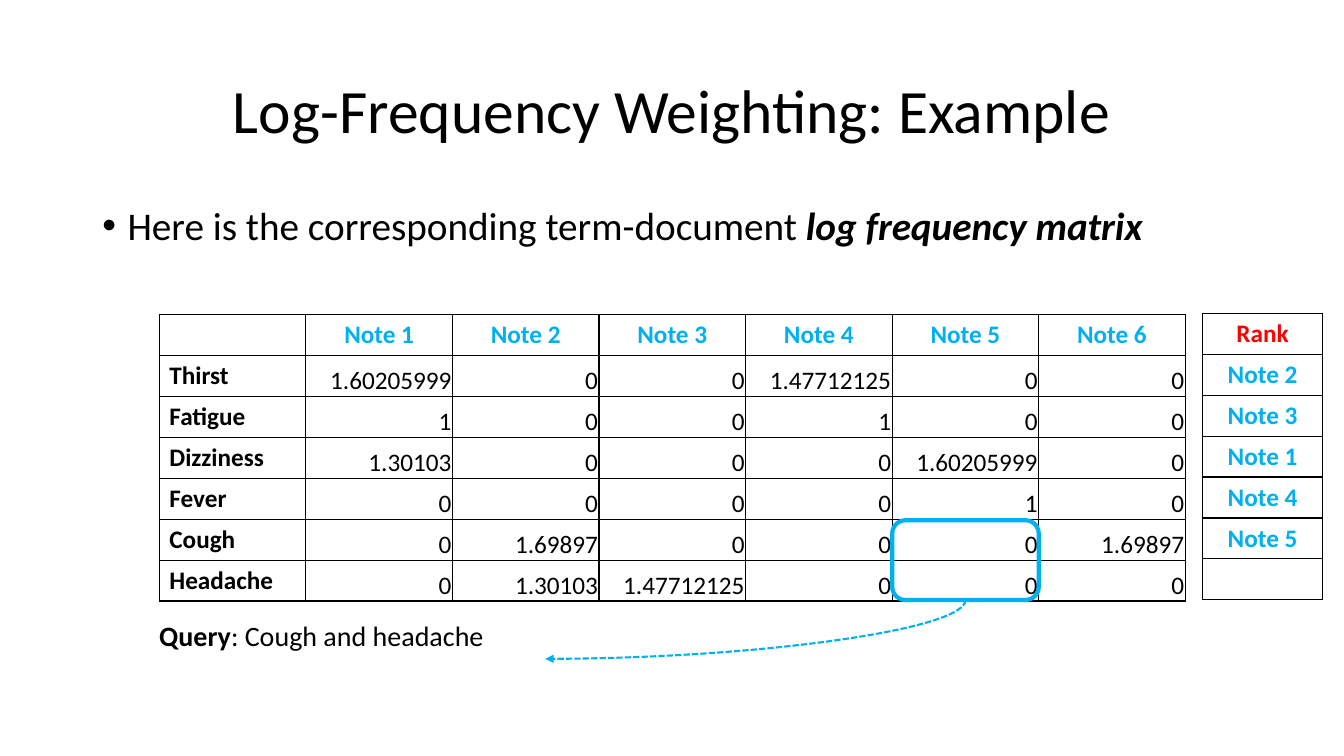
from dataclasses import dataclass

import pptx
import pptx.util
import pptx.dml.color
import pptx.enum.dml
import pptx.enum.shapes
import pptx.enum.text
import pptx.oxml
import pptx.oxml.ns

Pt = pptx.util.Pt
RGB = pptx.dml.color.RGBColor.from_string
qn = pptx.oxml.ns.qn
ALIGN = pptx.enum.text.PP_ALIGN
ANCHOR = pptx.enum.text.MSO_ANCHOR


@dataclass(frozen=True)
class Theme:
    font: str = "Calibri"
    text: str = "000000"
    accent: str = "00B0F0"
    rank: str = "FF0000"
    title: int = 44
    body: int = 28
    query: int = 20
    cell: int = 18


THEME = Theme()
ROW_H = 29.2
NOTES = [f"Note {n}" for n in range(1, 7)]
WEIGHTS = {
    "Thirst": ["1.60205999", "0", "0", "1.47712125", "0", "0"],
    "Fatigue": ["1", "0", "0", "1", "0", "0"],
    "Dizziness": ["1.30103", "0", "0", "0", "1.60205999", "0"],
    "Fever": ["0", "0", "0", "0", "1", "0"],
    "Cough": ["0", "1.69897", "0", "0", "0", "1.69897"],
    "Headache": ["0", "1.30103", "1.47712125", "0", "0", "0"],
}
RANKING = ["Note 2", "Note 3", "Note 1", "Note 4", "Note 5", ""]


def element(tag, **attrs):
    el = pptx.oxml.parse_xml(f"<{tag} {pptx.oxml.ns.nsdecls('a')}/>")
    for name, value in attrs.items():
        el.set(name, value)
    return el


def add_run(p, text, size, color=THEME.text, bold=False, italic=False):
    r = p.add_run()
    r.text = text
    r.font.name, r.font.size = THEME.font, Pt(size)
    r.font.bold, r.font.italic = bold, italic
    r.font.color.rgb = RGB(color)


def add_text(s, box, wrap=True):
    tf = s.shapes.add_textbox(*map(Pt, box)).text_frame
    tf.word_wrap = wrap
    return tf


def add_title(s, box):
    tf = add_text(s, box)
    tf.vertical_anchor = ANCHOR.MIDDLE
    p = tf.paragraphs[0]
    p.alignment, p.line_spacing = ALIGN.CENTER, 0.9
    add_run(p, "Log-Frequency Weighting: Example", THEME.title)


def add_body(s, box):
    p = add_text(s, box).paragraphs[0]
    p.line_spacing, p.space_before = 0.9, Pt(10)
    pPr = p._p.get_or_add_pPr()
    pPr.set("marL", str(Pt(18)))
    pPr.set("indent", str(-Pt(18)))
    pPr.append(element("a:buFont", typeface="Arial"))
    pPr.append(element("a:buChar", char="•"))
    add_run(p, "Here is the corresponding term-document ", THEME.body)
    add_run(p, "log frequency matrix", THEME.body, bold=True, italic=True)


def add_query(s, box):
    tf = add_text(s, box, wrap=False)
    tf.auto_size = pptx.enum.text.MSO_AUTO_SIZE.SHAPE_TO_FIT_TEXT
    p = tf.paragraphs[0]
    add_run(p, "Query", THEME.query, bold=True)
    add_run(p, ": Cough and headache", THEME.query)


def border_cell(cell):
    tcPr = cell._tc.get_or_add_tcPr()
    for i, side in enumerate("LRTB"):
        ln = element(f"a:ln{side}", w=str(Pt(1)))
        fill = element("a:solidFill")
        fill.append(element("a:srgbClr", val=THEME.text))
        ln.append(fill)
        tcPr.insert(i, ln)


def add_grid(s, box, rows, style_cell):
    x, y, w, h = box
    table = s.shapes.add_table(len(rows), len(rows[0]), *map(Pt, box)).table
    table.first_row = table.horz_banding = False
    for col in table.columns:
        col.width = Pt(w / len(rows[0]))
    for i, values in enumerate(rows):
        table.rows[i].height = Pt(h / len(rows))
        for j, value in enumerate(values):
            cell = table.cell(i, j)
            cell.fill.background()
            border_cell(cell)
            if value:
                p = cell.text_frame.paragraphs[0]
                color, bold, p.alignment = style_cell(cell, i, j)
                add_run(p, value, THEME.cell, color, bold)


def style_weight(cell, i, j):
    if i == 0:
        return THEME.accent, True, ALIGN.CENTER
    if j == 0:
        return THEME.text, True, ALIGN.LEFT
    cell.vertical_anchor = ANCHOR.BOTTOM
    cell.margin_left = cell.margin_right = cell.margin_top = Pt(0.75)
    cell.margin_bottom = 0
    return THEME.text, False, ALIGN.RIGHT


def style_rank(cell, i, j):
    return (THEME.accent if i else THEME.rank), True, ALIGN.CENTER


def add_highlight(s, box):
    sp = s.shapes.add_shape(pptx.enum.shapes.MSO_SHAPE.ROUNDED_RECTANGLE, *map(Pt, box))
    sp.shadow.inherit = False
    sp.fill.background()
    sp.line.color.rgb = RGB(THEME.accent)
    sp.line.width = Pt(3)


def add_curve(s, box):
    x, y, w, h = box
    left, top = x + (w - h) / 2, y + (h - w) / 2
    curve = s.shapes.add_connector(
        pptx.enum.shapes.MSO_CONNECTOR.CURVE,
        Pt(left), Pt(top), Pt(left + h), Pt(top + w))
    spPr = curve._element.spPr
    spPr.find(qn("a:xfrm")).set("rot", "5400000")
    spPr.find(qn("a:prstGeom")).set("prst", "curvedConnector2")
    curve.line.color.rgb = RGB(THEME.accent)
    curve.line.width = Pt(1.5)
    curve.line.dash_style = pptx.enum.dml.MSO_LINE.SQUARE_DOT
    spPr.find(qn("a:ln")).append(element("a:tailEnd", type="triangle"))
    spPr.append(element("a:effectLst"))


def add_matrix(s, box):
    x, y, w, h = box
    rows = [["", *NOTES]] + [[term, *values] for term, values in WEIGHTS.items()]
    add_grid(s, box, rows, style_weight)
    col_w, row_h = w / len(rows[0]), h / len(rows)
    add_highlight(s, (x + 5 * col_w, y + 5 * row_h + 0.7, col_w, 2 * row_h - 1.4))
    add_query(s, (x - 7.2, y + h + 9.2, 248.4, 31.7))
    curve_x = x + 275.7
    add_curve(s, (curve_x, y + h - 0.7, x + 5.5 * col_w - curve_x, 42))


def add_ranking(s, box):
    add_grid(s, box, [[value] for value in ["Rank", *RANKING]], style_rank)


def main():
    prs = pptx.Presentation()
    prs.slide_width, prs.slide_height = Pt(960), Pt(540)
    s = prs.slides.add_slide(prs.slide_layouts[6])
    add_title(s, (66, 28.8, 828, 104.4))
    add_body(s, (66, 144, 843.8, 367.2))
    add_matrix(s, (113.8, 224.9, 732.9, 7 * ROW_H))
    add_ranking(s, (859, 224, 85.7, 7 * ROW_H))
    prs.save("out.pptx")


if __name__ == "__main__":
    main()
